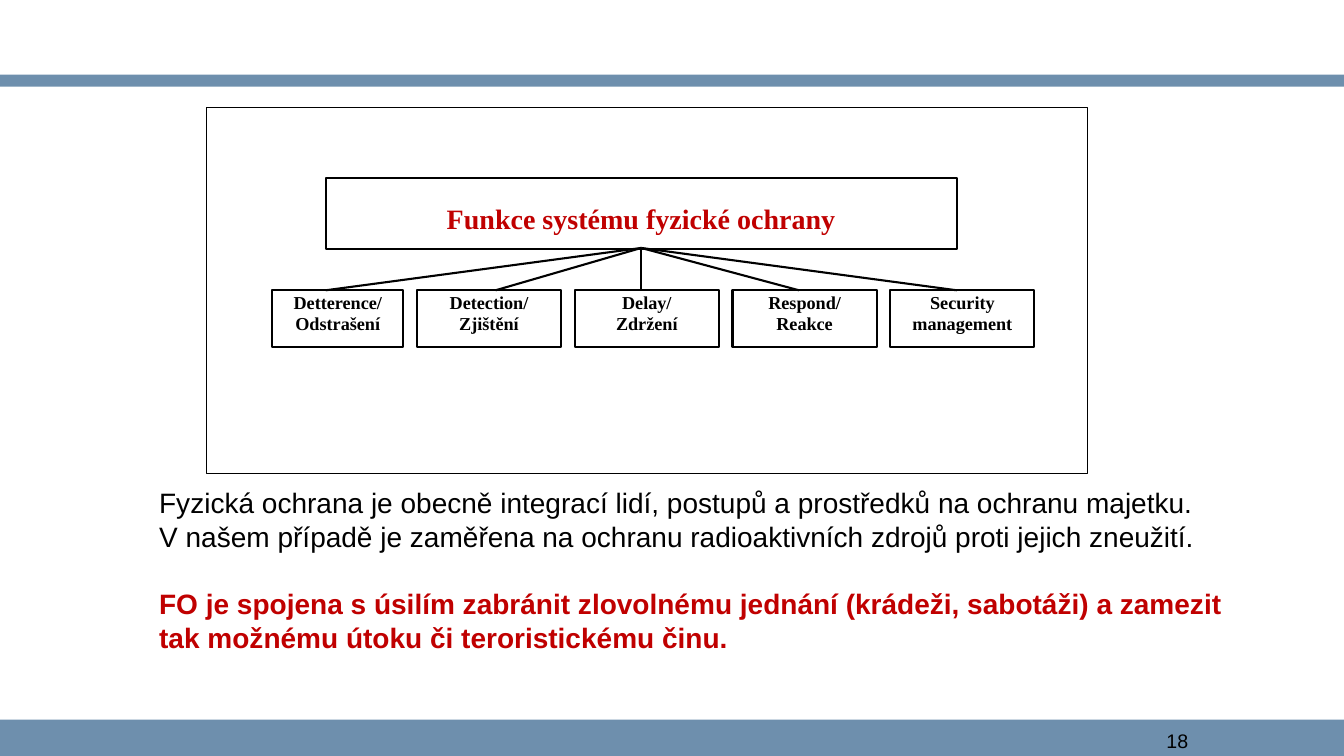
from lxml.etree import SubElement
from pptx import Presentation
from pptx.dml.color import RGBColor
from pptx.enum.shapes import MSO_CONNECTOR, MSO_SHAPE
from pptx.enum.text import MSO_ANCHOR, PP_ALIGN
from pptx.oxml.ns import qn
from pptx.util import Inches, Pt

BLUE = RGBColor(0x6E, 0x8F, 0xAD)
RED = RGBColor(0xC0, 0, 0)
BLACK = RGBColor(0, 0, 0)
WHITE = RGBColor(255, 255, 255)
SERIF = "Times New Roman"

deck = Presentation()
deck.slide_width = Inches(13.33)
deck.slide_height = Inches(7.5)
slide = deck.slides.add_slide(deck.slide_layouts[6])
shapes = slide.shapes


def add_rect(left, top, width, height, fill=WHITE, line=0):
    box = shapes.add_shape(MSO_SHAPE.RECTANGLE, Inches(left), Inches(top),
                           Inches(width), Inches(height))
    box.shadow.inherit = False
    box.fill.solid()
    box.fill.fore_color.rgb = fill
    if line:
        box.line.color.rgb = BLACK
        box.line.width = Pt(line)
    else:
        box.line.fill.background()
    return box


def add_text(frame, text, size=20, face="Arial", color=BLACK, bold=False,
             align=PP_ALIGN.LEFT, space=0, pitch=1.0):
    para = frame.paragraphs[0]
    if para.runs:
        para = frame.add_paragraph()
    para.alignment = align
    para.space_before = Pt(space)
    para.line_spacing = pitch
    run = para.add_run()
    run.text = text
    run.font.size = Pt(size)
    run.font.name = face
    run.font.bold = bold
    run.font.color.rgb = color


add_rect(0, 7.14, 13.33, 0.36, fill=BLUE)
add_rect(0, 0.74, 13.33, 0.12, fill=BLUE)

page = shapes.add_textbox(Inches(11.47), Inches(7.18), Inches(1.38), Inches(0.32))
add_text(page.text_frame, "18", size=14)

add_rect(2.05, 1.07, 8.74, 3.63, line=0.75)
head = add_rect(3.23, 1.77, 6.26, 0.7, line=1.5).text_frame
head.vertical_anchor = MSO_ANCHOR.MIDDLE
head.margin_top = Inches(0.15)
add_text(head, "Funkce systému fyzické ochrany", face=SERIF, color=RED,
         bold=True, align=PP_ALIGN.CENTER)

tasks = [
    ("Detterence/", "Odstrašení", 0.13, 0),
    ("Detection/", "Zjištění", 0, 0.12),
    ("Delay/", "Zdržení", 0, 0),
    ("Respond/", "Reakce", 0, 0),
    ("Security", "management", 0, 0),
]
col, wide, row = 1.565, 1.43, 2.88
for num, (first, second, trim, shift) in enumerate(tasks):
    box = add_rect(2.57 + num * col + trim, row, wide - trim, 0.56, line=1.5)
    frame = box.text_frame
    frame.word_wrap = True
    frame.vertical_anchor = MSO_ANCHOR.TOP
    for text, space in ((first, 0), (second, 2.6)):
        add_text(frame, text, size=13, face=SERIF, bold=True,
                 align=PP_ALIGN.CENTER, space=space, pitch=0.8)

    link = shapes.add_connector(
        MSO_CONNECTOR.STRAIGHT, Inches(3.23 + num * col + shift), Inches(row),
        Inches(6.36), Inches(2.46))
    link.line.color.rgb = BLACK
    link.line.width = Pt(1.5)
    SubElement(link.element.spPr, qn("a:effectLst"))

body = shapes.add_textbox(Inches(1.48), Inches(4.77), Inches(11.11), Inches(1.78))
frame = body.text_frame
frame.word_wrap = True
add_text(frame, "Fyzická ochrana je obecně integrací lidí, postupů a prostředků "
         "na ochranu majetku.")
add_text(frame, "V našem případě je zaměřena na ochranu radioaktivních zdrojů "
         "proti jejich zneužití.")
add_text(frame, "FO je spojena s úsilím zabránit zlovolnému jednání (krádeži, "
         "sabotáži) a zamezit tak možnému útoku či teroristickému činu.",
         color=RED, bold=True, space=24)

deck.save("out.pptx")
